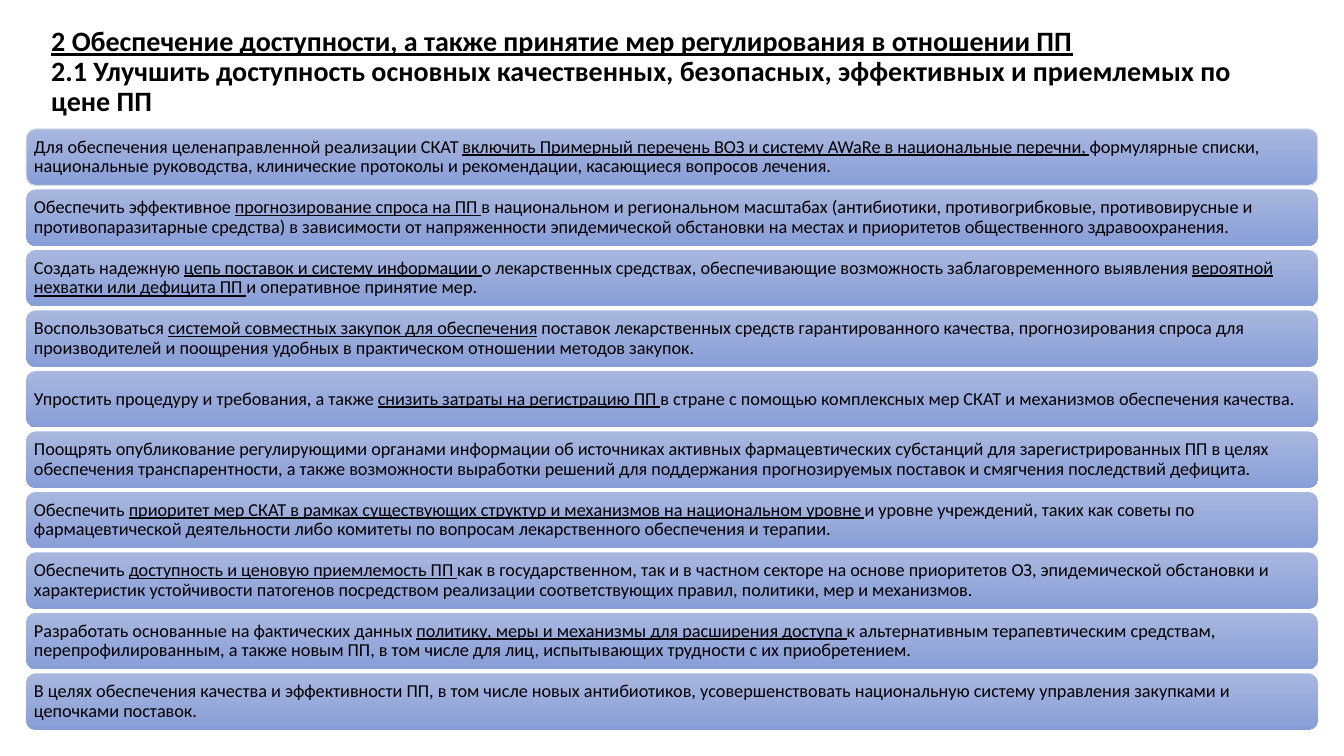
"""Build a slide listing ten measures for access to antimicrobial medicines."""
from pptx import Presentation
from pptx.dml.color import RGBColor
from pptx.enum.shapes import MSO_SHAPE
from pptx.enum.text import MSO_ANCHOR, PP_ALIGN
from pptx.util import Inches, Pt

ROUNDED = MSO_SHAPE.ROUNDED_RECTANGLE
MIDDLE = MSO_ANCHOR.MIDDLE
LEFT = PP_ALIGN.LEFT

FONT = "Calibri"
COLORS = {"text": "000000", "top": "A8B7DF", "bottom": "889ED7", "border": "D6DCE5"}
BAR_LEFT, BAR_TOP, BAR_WIDTH, BAR_HEIGHT, BAR_STEP = 0.26, 1.28, 12.81, 0.56, 0.6

TITLE = [
    "|2 Обеспечение доступности, а также принятие мер регулирования в отношении ПП|",
    "2.1 Улучшить доступность основных качественных, безопасных, эффективных и приемлемых по цене ПП",
]
MEASURES = [
    "Для обеспечения целенаправленной реализации СКАТ |включить Примерный перечень ВОЗ и систему AWaRe "
    "в национальные перечни, |формулярные списки, национальные руководства, клинические протоколы "
    "и рекомендации, касающиеся вопросов лечения.",
    "Обеспечить эффективное |прогнозирование спроса на ПП |в национальном и региональном масштабах "
    "(антибиотики, противогрибковые, противовирусные и противопаразитарные средства) в зависимости от "
    "напряженности эпидемической обстановки на местах и приоритетов общественного здравоохранения.",
    "Создать надежную |цепь поставок и систему информации |о лекарственных средствах, обеспечивающие "
    "возможность заблаговременного выявления |вероятной нехватки или дефицита ПП |и оперативное принятие мер.",
    "Воспользоваться |системой совместных закупок для обеспечения| поставок лекарственных средств "
    "гарантированного качества, прогнозирования спроса для производителей и поощрения удобных "
    "в практическом отношении методов закупок.",
    "Упростить процедуру и требования, а также |снизить затраты на регистрацию ПП |в стране с помощью "
    "комплексных мер СКАТ и механизмов обеспечения качества.",
    "Поощрять опубликование регулирующими органами информации об источниках активных фармацевтических "
    "субстанций для зарегистрированных ПП в целях обеспечения транспарентности, а также возможности "
    "выработки решений для поддержания прогнозируемых поставок и смягчения последствий дефицита.",
    "Обеспечить |приоритет мер СКАТ в рамках существующих структур и механизмов на национальном уровне |"
    "и уровне учреждений, таких как советы по фармацевтической деятельности либо комитеты по вопросам "
    "лекарственного обеспечения и терапии.",
    "Обеспечить |доступность и ценовую приемлемость ПП |как в государственном, так и в частном секторе "
    "на основе приоритетов ОЗ, эпидемической обстановки и характеристик устойчивости патогенов "
    "посредством реализации соответствующих правил, политики, мер и механизмов.",
    "Разработать основанные на фактических данных |политику, меры и механизмы для расширения доступа |"
    "к альтернативным терапевтическим средствам, перепрофилированным, а также новым ПП, в том числе "
    "для лиц, испытывающих трудности с их приобретением.",
    "В целях обеспечения качества и эффективности ПП, в том числе новых антибиотиков, усовершенствовать "
    "национальную систему управления закупками и цепочками поставок.",
]


def add_runs(p, marked, size, bold=False):
    """Add text to a paragraph, underlining the parts between bars."""
    p.alignment = LEFT
    p.line_spacing = 0.9
    for i, part in enumerate(marked.split("|")):
        if part:
            r = p.add_run()
            r.text = part
            r.font.name = FONT
            r.font.size = Pt(size)
            r.font.bold = bold
            r.font.underline = i % 2 == 1
            r.font.color.rgb = RGBColor.from_string(COLORS["text"])


prs = Presentation()
prs.slide_width, prs.slide_height = Inches(13.33), Inches(7.5)
s = prs.slides.add_slide(prs.slide_layouts[6])

title = s.shapes.add_textbox(Inches(0.41), Inches(0.31), Inches(12.42), Inches(0.82))
tf = title.text_frame
tf.word_wrap = True
tf.vertical_anchor = MIDDLE
p = tf.paragraphs[0]
add_runs(p, TITLE[0], 20, True)
p.add_line_break()
add_runs(p, TITLE[1], 20, True)

for row, measure in enumerate(MEASURES):
    sp = s.shapes.add_shape(ROUNDED, Inches(BAR_LEFT), Inches(BAR_TOP + row * BAR_STEP),
                            Inches(BAR_WIDTH), Inches(BAR_HEIGHT))
    sp.shadow.inherit = False
    sp.fill.gradient()
    sp.fill.gradient_angle = 270
    for stop, name in zip(sp.fill.gradient_stops, ("top", "bottom")):
        stop.color.rgb = RGBColor.from_string(COLORS[name])
    if row == 0:
        sp.line.color.rgb = RGBColor.from_string(COLORS["border"])
        sp.line.width = Pt(0.75)
    else:
        sp.line.fill.background()
    tf = sp.text_frame
    tf.word_wrap = True
    tf.vertical_anchor = MIDDLE
    tf.margin_left = tf.margin_right = tf.margin_top = tf.margin_bottom = Inches(0.05)
    add_runs(tf.paragraphs[0], measure, 13)

prs.save("out.pptx")
